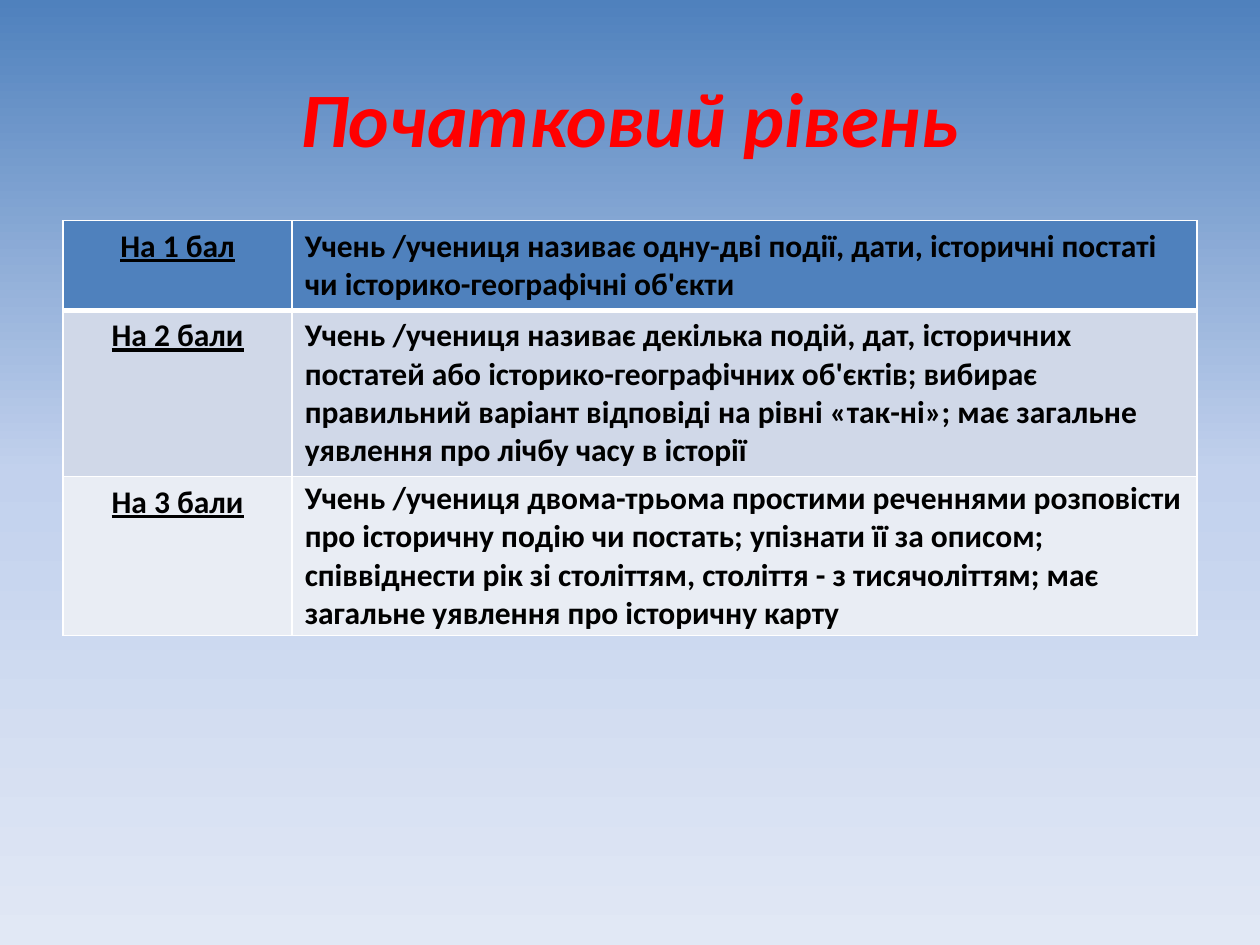
import copy
import pptx
import pptx.util
import pptx.dml.color
import pptx.enum.text
import pptx.oxml
import pptx.oxml.ns

Cm, Pt = pptx.util.Cm, pptx.util.Pt
ALIGN = pptx.enum.text.PP_ALIGN


def rgb(value):
    return pptx.dml.color.RGBColor.from_string(value)


def add_border(cell, side, width):
    cell._tc.get_or_add_tcPr().append(pptx.oxml.parse_xml(
        f'<a:{side} {pptx.oxml.ns.nsdecls("a")} w="{Pt(width)}"><a:solidFill>'
        f'<a:srgbClr val="FFFFFF"/></a:solidFill></a:{side}>'))


prs = pptx.Presentation()
prs.slide_width, prs.slide_height = Cm(25.4), Cm(19.05)
s = prs.slides.add_slide(prs.slide_layouts[5])

# Background: three-stop gradient running downwards
fill = s.background.fill
fill.gradient()
fill.gradient_angle = 270
stops = s._element.find(".//" + pptx.oxml.ns.qn("a:gsLst"))
stops.append(copy.deepcopy(stops[0]))
for stop, position, color in zip(fill.gradient_stops, (0, 0.5, 1),
                                 ("4F81BD", "C2D1ED", "E1E8F5")):
    stop.position = position
    stop.color.rgb = rgb(color)

# Title
sp = s.shapes.title
sp.left, sp.top, sp.width, sp.height = Cm(1.27), Cm(0.76), Cm(22.86), Cm(3.18)
tf = sp.text_frame
tf.vertical_anchor = pptx.enum.text.MSO_ANCHOR.MIDDLE
p = tf.paragraphs[0]
p.alignment = ALIGN.CENTER
r = p.add_run()
r.text = "Початковий рівень"
r.font.name, r.font.size = "Calibri", Pt(44)
r.font.bold = r.font.italic = True
r.font.color.rgb = rgb("FF0000")

# Table: mark, requirement, then row height and fill
rows = [
    ("На 1 бал",
     "Учень /учениця називає одну-дві події, дати, історичні постаті "
     "чи історико-географічні об'єкти", 1.79, "4F81BD"),
    ("На 2 бали",
     "Учень /учениця називає декілька подій, дат, історичних постатей або "
     "історико-географічних об'єктів; вибирає правильний варіант відповіді "
     "на рівні «так-ні»; має загальне уявлення про лічбу часу в історії",
     3.35, "D0D8E8"),
    ("На 3 бали",
     "Учень /учениця двома-трьома простими реченнями розповісти про історичну "
     "подію чи постать; упізнати її за описом; співвіднести рік зі століттям, "
     "століття - з тисячоліттям; має загальне уявлення про історичну карту",
     3.2, "E9EDF4"),
]
table = s.shapes.add_table(len(rows), 2, Cm(1.27), Cm(4.45),
                           Cm(22.86), Cm(8.34)).table
table.columns[0].width, table.columns[1].width = Cm(4.62), Cm(18.24)

for i, (mark, requirement, height, color) in enumerate(rows):
    table.rows[i].height = Cm(height)
    for j, text in enumerate((mark, requirement)):
        cell = table.cell(i, j)
        # The line under the first row is thicker
        for side, width in (("lnL", 1), ("lnR", 1),
                            ("lnT", 3 if i == 1 else 1),
                            ("lnB", 3 if i == 0 else 1)):
            add_border(cell, side, width)
        cell.fill.solid()
        cell.fill.fore_color.rgb = rgb(color)
        p = cell.text_frame.paragraphs[0]
        p.alignment = ALIGN.CENTER if j == 0 else ALIGN.LEFT
        r = p.add_run()
        r.text = text
        r.font.name, r.font.size = "Calibri", Pt(18)
        r.font.bold = True
        r.font.underline = j == 0
        r.font.color.rgb = rgb("000000")

# Tighter margins in the last requirement
cell = table.cell(2, 1)
cell.margin_top = cell.margin_bottom = Cm(0.05)

prs.save("out.pptx")
